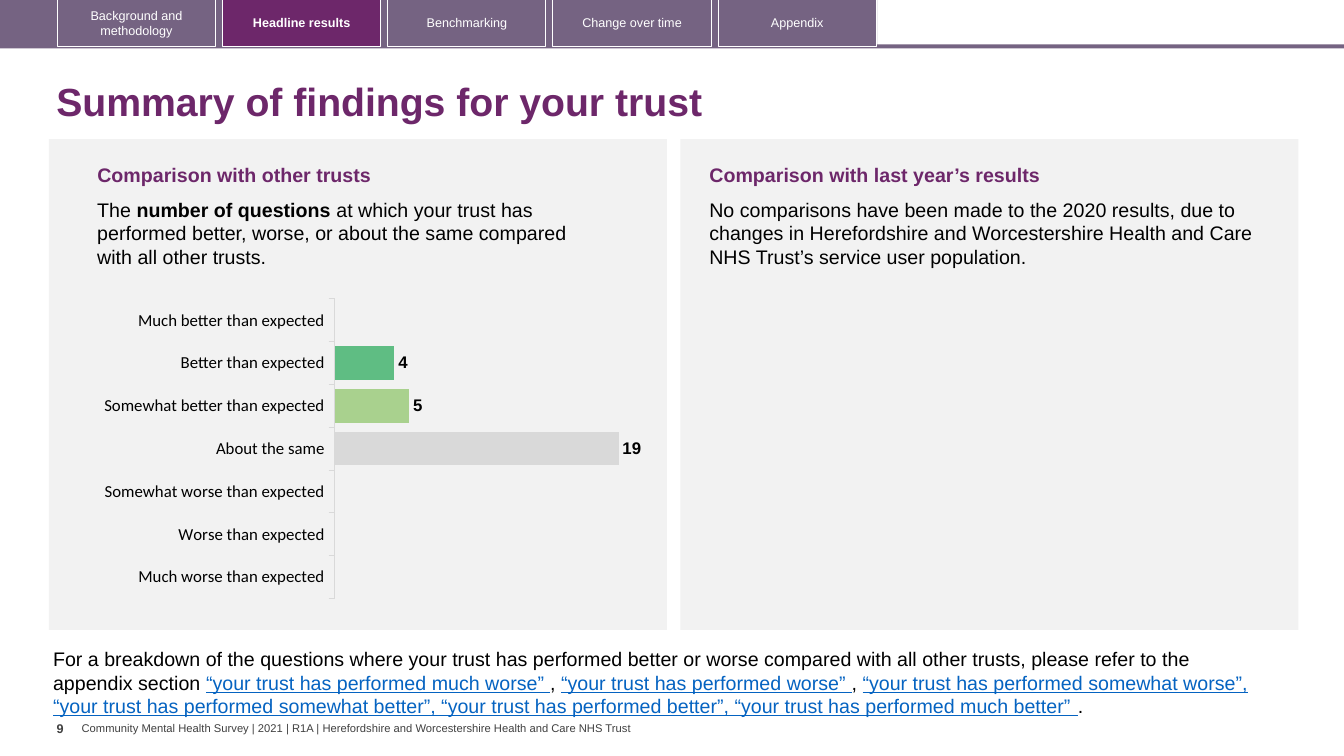
from lxml import etree
from pptx import Presentation
from pptx.chart.data import CategoryChartData
from pptx.dml.color import RGBColor
from pptx.enum.chart import XL_CHART_TYPE, XL_LABEL_POSITION, XL_TICK_MARK
from pptx.enum.shapes import MSO_SHAPE
from pptx.enum.text import MSO_ANCHOR, MSO_AUTO_SIZE, PP_ALIGN
from pptx.oxml.ns import qn
from pptx.util import Pt

RECT = MSO_SHAPE.RECTANGLE
BARS = XL_CHART_TYPE.BAR_CLUSTERED
OUTER = XL_LABEL_POSITION.OUTSIDE_END
TICK = XL_TICK_MARK.OUTSIDE
NOTICK = XL_TICK_MARK.NONE
TOP, MID = MSO_ANCHOR.TOP, MSO_ANCHOR.MIDDLE
LEFT, CENTRE = PP_ALIGN.LEFT, PP_ALIGN.CENTER
GROW = MSO_AUTO_SIZE.SHAPE_TO_FIT_TEXT

HUES = {"plum": "6D276A", "mauve": "756382", "panel": "F2F2F2", "white": "FFFFFF",
        "black": "000000", "grey": "404040", "link": "0563C1", "axis": "D9D9D9"}
GRADES = [
    ("Much better than expected", None, "419999"),
    ("Better than expected", 4, "5FBD83"),
    ("Somewhat better than expected", 5, "A9D18E"),
    ("About the same", 19, "D9D9D9"),
    ("Somewhat worse than expected", None, "FFD966"),
    ("Worse than expected", None, "F1BE48"),
    ("Much worse than expected", None, "E87722"),
]
TABS = ["Background and methodology", "Headline results", "Benchmarking",
        "Change over time", "Appendix"]
ACTIVE = "Headline results"


def style(font, size=14, hue="black", bold=False, line=False, face="Arial"):
    """Set the look of a font."""
    font.name, font.size, font.bold, font.underline = face, Pt(size), bold, line
    font.color.rgb = RGBColor.from_string(HUES[hue])


def write(frame, text, align=LEFT, space=None, **look):
    """Fill a frame with a string or a list of (text, changes) runs."""
    para = frame.paragraphs[0]
    para.alignment = align
    if space:
        para.line_spacing = space
    for part, change in [(text, {})] if isinstance(text, str) else text:
        run = para.add_run()
        run.text = part
        style(run.font, **{**look, **change})


class Page:
    """Hold the current slide and draw its elements."""

    def __init__(self, slide):
        """Keep the slide."""
        self.slide = slide

    def block(self, x, y, wide, high, fill=None, edge=None):
        """Draw a rectangle."""
        box = self.slide.shapes.add_shape(RECT, Pt(x), Pt(y), Pt(wide), Pt(high))
        box.shadow.inherit = False
        if fill:
            box.fill.solid()
            box.fill.fore_color.rgb = RGBColor.from_string(HUES[fill])
        else:
            box.fill.background()
        if edge:
            box.line.color.rgb = RGBColor.from_string(HUES[edge])
            box.line.width = Pt(0.75)
        else:
            box.line.fill.background()
        return box

    def tab(self, x, name):
        """Draw one navigation tab."""
        live = name == ACTIVE
        box = self.block(x, -0.7, 113, 34, "plum" if live else None, "white")
        box.text_frame.word_wrap = True
        box.text_frame.vertical_anchor = MID
        write(box.text_frame, name, align=CENTRE, size=9, hue="white", bold=live)

    def text(self, x, y, wide, high, text, anchor=TOP, wrap=True, grow=True,
             pad=(7.2, 3.6), **look):
        """Place a text box."""
        box = self.slide.shapes.add_textbox(Pt(x), Pt(y), Pt(wide), Pt(high))
        frame = box.text_frame
        frame.word_wrap, frame.vertical_anchor = wrap, anchor
        if grow:
            frame.auto_size = GROW
        frame.margin_left = frame.margin_right = Pt(pad[0])
        frame.margin_top = frame.margin_bottom = Pt(pad[1])
        write(frame, text, **look)

    def chart(self, x, y, wide, high, rows):
        """Draw the bar chart of question counts."""
        data = CategoryChartData(number_format="0")
        data.categories = [row[0] for row in rows]
        data.add_series("Series 1", [row[1] for row in rows])
        chart = self.slide.shapes.add_chart(
            BARS, Pt(x), Pt(y), Pt(wide), Pt(high), data).chart
        chart.has_title = chart.has_legend = False
        style(chart.font, size=10, face="Calibri")

        cats, vals = chart.category_axis, chart.value_axis
        cats.reverse_order = True
        cats.has_major_gridlines = False
        cats.major_tick_mark, cats.minor_tick_mark = TICK, NOTICK
        style(cats.tick_labels.font, size=12, face="Calibri")
        cats.format.line.color.rgb = RGBColor.from_string(HUES["axis"])
        cats.format.line.width = Pt(0.75)
        vals.has_major_gridlines = vals.visible = False
        vals.minimum_scale, vals.maximum_scale = 0, 20

        plot = chart.plots[0]
        plot.gap_width = 27
        plot.vary_by_categories = False
        bars = plot.series[0]
        for spot, row in enumerate(rows):
            fill = bars.points[spot].format.fill
            fill.solid()
            fill.fore_color.rgb = RGBColor.from_string(row[2])
        tags = bars.data_labels
        tags.show_value, tags.position = True, OUTER
        tags.number_format, tags.number_format_is_linked = "0", False
        style(tags.font, size=12, bold=True)
        self.inset(chart, 0.467, 0.072, 0.476, 0.872)

    def inset(self, chart, x, y, wide, high):
        """Fix the inner plot area as fractions of the chart."""
        area = chart.element.find(".//" + qn("c:plotArea"))
        for old in area.findall(qn("c:layout")):
            area.remove(old)
        outer = etree.Element(qn("c:layout"))
        area.insert(0, outer)
        node = etree.SubElement(outer, qn("c:manualLayout"))
        for key, val in [("layoutTarget", "inner"), ("xMode", "edge"), ("yMode", "edge"),
                         ("x", x), ("y", y), ("w", wide), ("h", high)]:
            etree.SubElement(node, qn("c:" + key)).set("val", str(val))


def main():
    """Build and save the slide."""
    deck = Presentation()
    deck.slide_width, deck.slide_height = Pt(960), Pt(540)
    page = Page(deck.slides.add_slide(deck.slide_layouts[6]))

    page.text(58.3, 515.5, 398, 9.4,
              "Community Mental Health Survey | 2021 | R1A | "
              "Herefordshire and Worcestershire Health and Care NHS Trust",
              anchor=MID, wrap=False, pad=(0, 0), size=8, hue="grey")
    page.block(0, 31.7, 960, 3, "mauve")
    page.block(0, 0, 626.5, 34, "mauve")
    for spot, name in enumerate(TABS):
        page.tab(41 + 118 * spot, name)

    page.text(33.1, 48.2, 899.3, 51.8, "Summary of findings for your trust",
              anchor=MID, grow=False, space=0.9, size=28, hue="plum", bold=True)

    count = [("The ", {}), ("number of questions ", {"bold": True}),
             ("at which your trust has performed better, worse, or about the same "
              "compared with all other trusts.", {})]
    change = ("No comparisons have been made to the 2020 results, due to changes in "
              "Herefordshire and Worcestershire Health and Care NHS Trust’s "
              "service user population.")
    for x, left, head, wide, body in [
            (35, 62.4, "Comparison with other trusts", 360, count),
            (486, 499.6, "Comparison with last year’s results", 407, change)]:
        page.block(x, 99.4, 441.4, 350.6, "panel")
        page.text(left, 113, 397.4, 24.5, head, hue="plum", bold=True)
        page.text(left, 137.5, wide, 58.3, body)
    page.chart(29.5, 195.8, 448.6, 245.5, GRADES)

    link = {"hue": "link", "line": True}
    page.text(30.8, 458.6, 879.1, 58.3, [
        ("For a breakdown of the questions where your trust has performed better or worse "
         "compared with all other trusts, please refer to the appendix section ", {}),
        ("“your trust has performed much worse” ", link), (", ", {}),
        ("“your trust has performed worse” ", link), (", ", {}),
        ("“your trust has performed somewhat worse”, “your trust has performed somewhat "
         "better”, “your trust has performed better”, “your trust has performed much "
         "better” ", link), (".", {})])
    page.text(40.5, 511.2, 18, 28.8, "9", wrap=False, grow=False, pad=(0, 3.6),
              size=9, hue="grey", bold=True)
    deck.save("out.pptx")


if __name__ == "__main__":
    main()
